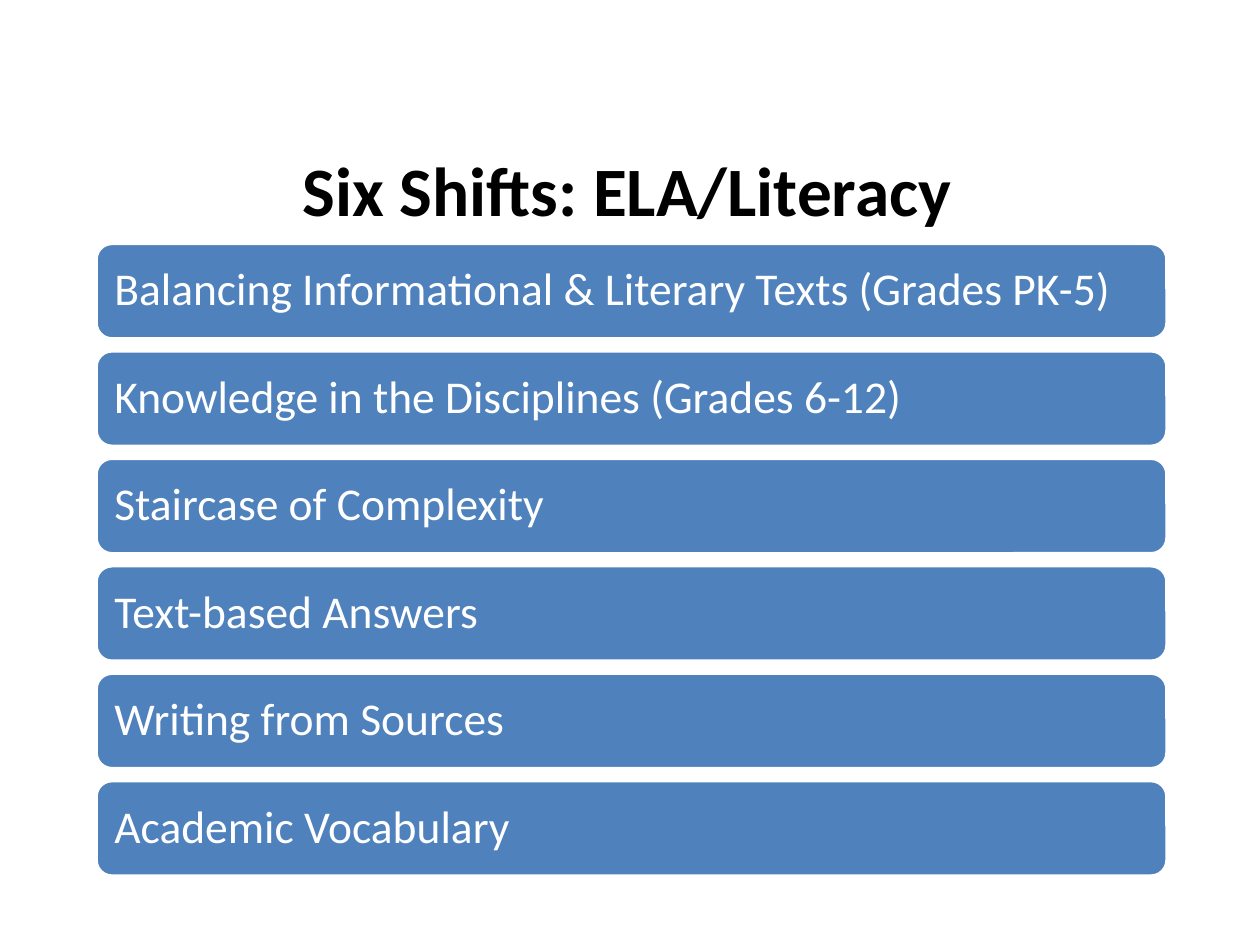
from dataclasses import dataclass
from pptx import Presentation
from pptx.dml.color import RGBColor as Rgb
from pptx.enum.shapes import MSO_SHAPE as Form
from pptx.enum.text import MSO_ANCHOR as Anchor, MSO_AUTO_SIZE as Fit, PP_ALIGN as Align
from pptx.util import Pt

HUES = {"bar": "4F81BD", "edge": "FFFFFF", "light": "FFFFFF", "dark": "000000"}
SHIFTS = [
    "Balancing Informational & Literary Texts (Grades PK-5)",
    "Knowledge in the Disciplines (Grades 6-12)",
    "Staircase of Complexity",
    "Text-based Answers",
    "Writing from Sources",
    "Academic Vocabulary",
]
LEFT, TOP, WIDE, HIGH, STEP = 54.9, 139.1, 612, 54.6, 61.4
SIDES = ("margin_left", "margin_top", "margin_right", "margin_bottom")


@dataclass
class Bar:
    text: str
    top: float


def apply(item, vals: dict) -> None:
    for key, val in vals.items():
        setattr(item, key, val)


def hue(name: str) -> Rgb:
    return Rgb.from_string(HUES[name])


def write(shape, text: str, size: float, ink: str, bold: bool, para: dict, frame: dict) -> None:
    body = shape.text_frame
    body.text = text
    apply(body, {"word_wrap": True, "vertical_anchor": Anchor.MIDDLE, **frame})
    line = body.paragraphs[0]
    apply(line, para)
    font = line.runs[0].font
    apply(font, {"name": "Calibri", "size": Pt(size), "bold": bold})
    font.color.rgb = hue(ink)


def draw(slide, bar: Bar) -> None:
    shape = slide.shapes.add_shape(
        Form.ROUNDED_RECTANGLE, Pt(LEFT), Pt(bar.top), Pt(WIDE), Pt(HIGH))
    shape.shadow.inherit = False
    shape.fill.solid()
    shape.fill.fore_color.rgb = hue("bar")
    shape.line.color.rgb = hue("edge")
    shape.line.width = Pt(2)
    write(shape, bar.text, 26, "light", False,
          {"alignment": Align.LEFT, "line_spacing": 0.9},
          {side: Pt(7.8) for side in SIDES})


def main() -> None:
    deck = Presentation()
    apply(deck, {"slide_width": Pt(720), "slide_height": Pt(540)})
    slide = deck.slides.add_slide(deck.slide_layouts[5])
    title = slide.shapes.title
    apply(title, {"left": Pt(82), "top": Pt(80.6), "width": Pt(553), "height": Pt(54.7)})
    write(title, "Six Shifts: ELA/Literacy", 39.6, "dark", True,
          {"alignment": Align.CENTER}, {"auto_size": Fit.NONE})
    for row, text in enumerate(SHIFTS):
        draw(slide, Bar(text, TOP + row * STEP))
    deck.save("out.pptx")


if __name__ == "__main__":
    main()
